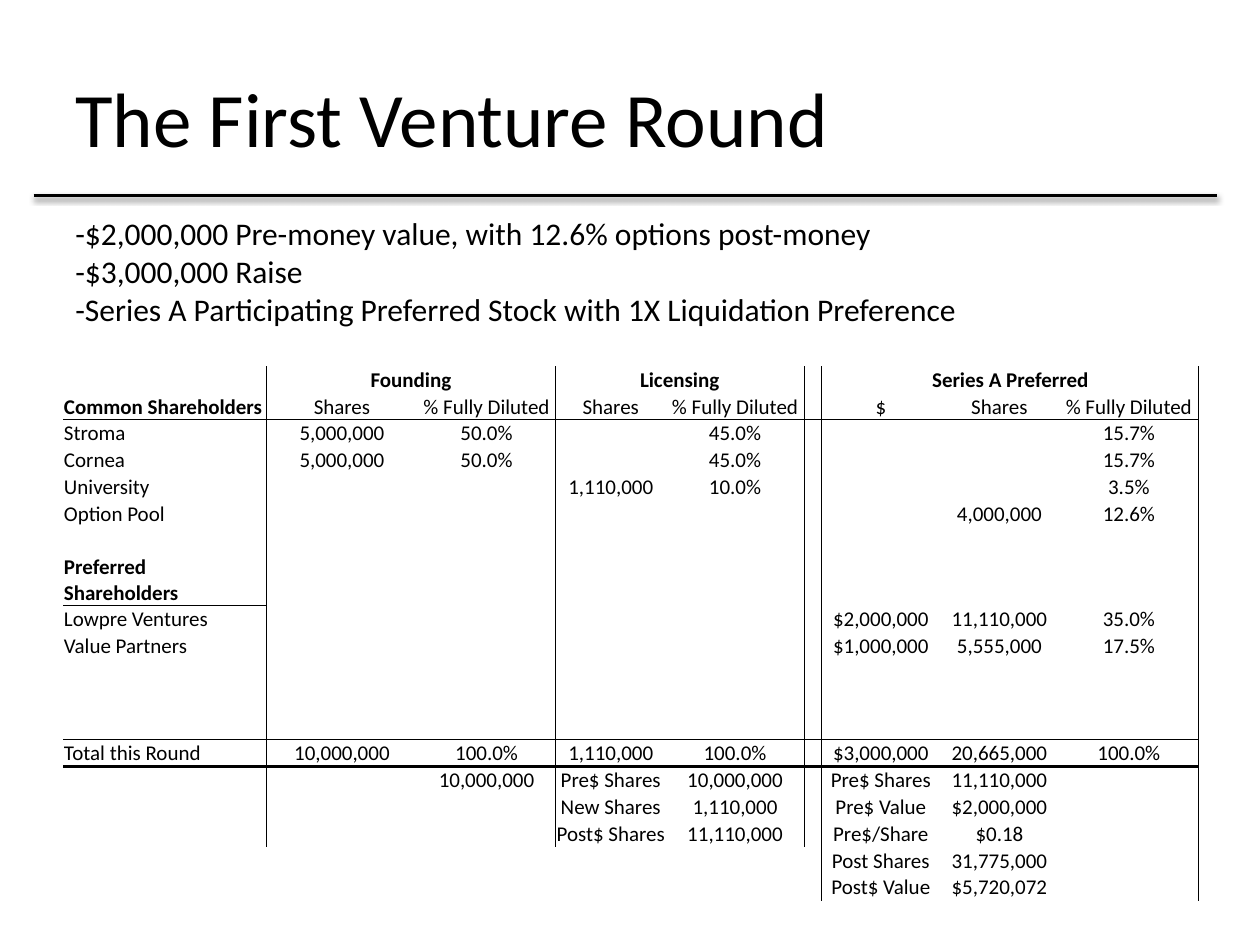
from lxml import etree
from pptx import Presentation
from pptx.dml.color import RGBColor
from pptx.enum.shapes import MSO_CONNECTOR as Connector
from pptx.enum.text import MSO_ANCHOR as Anchor, PP_ALIGN as Align
from pptx.oxml import parse_xml
from pptx.oxml.ns import nsdecls, qn
from pptx.util import Cm, Pt

FONT = "Calibri"
BLACK = "000000"
THIN, THICK = 0.5, 2

TERMS = [
    "-$2,000,000 Pre-money value, with 12.6% options post-money",
    "-$3,000,000 Raise",
    "-Series A Participating Preferred Stock with 1X Liquidation Preference",
]

# One string per table row, cells divided by bars
CAP_TABLE = [
    "|Founding||Licensing|||Series A Preferred||",
    "Common Shareholders|Shares|% Fully Diluted|Shares|% Fully Diluted||$|Shares|% Fully Diluted",
    "Stroma|5,000,000|50.0%||45.0%||||15.7%",
    "Cornea|5,000,000|50.0%||45.0%||||15.7%",
    "University|||1,110,000|10.0%||||3.5%",
    "Option Pool|||||||4,000,000|12.6%",
    "||||||||",
    "Preferred Shareholders||||||||",
    "Lowpre Ventures||||||$2,000,000|11,110,000|35.0%",
    "Value Partners||||||$1,000,000|5,555,000|17.5%",
    "||||||||",
    "||||||||",
    "||||||||",
    "Total this Round|10,000,000|100.0%|1,110,000|100.0%||$3,000,000|20,665,000|100.0%",
    "||10,000,000|Pre$ Shares|10,000,000||Pre$ Shares|11,110,000|",
    "|||New Shares|1,110,000||Pre$ Value|$2,000,000|",
    "|||Post$ Shares|11,110,000||Pre$/Share|$0.18|",
    "||||||Post Shares|31,775,000|",
    "||||||Post$ Value|$5,720,072|",
]
COLUMN_WIDTHS = [4.1, 3.05, 2.78, 2.23, 2.78, 0.36, 2.38, 2.4, 2.82]
ROW_HEIGHT = 0.54
GROUPS = [(1, 2), (3, 4), (6, 8)]  # first and last column of each round
BOLD_CELLS = {(0, 1), (0, 3), (0, 6), (1, 0), (7, 0)}

# Rules by grid edge: edge n lies before row or column n
SHORT_EDGES, LONG_EDGES = {1, 3, 5}, {6, 9}
LAST_SHORT_ROW = 16
ROW_EDGES = {2: THIN, 13: THIN, 14: THICK}


def color(value):
    return RGBColor.from_string(value)


def write(frame, lines, size=18, bold=False, align=Align.LEFT):
    for index, line in enumerate(lines):
        para = frame.paragraphs[0] if index == 0 else frame.add_paragraph()
        para.alignment = align
        if not line:
            # An empty cell keeps the line height of its font size
            end = etree.SubElement(para._p, qn("a:endParaRPr"))
            end.set("sz", str(size * 100))
            continue
        span = para.add_run()
        span.text = line
        span.font.name = FONT
        span.font.size = Pt(size)
        span.font.bold = bold
        span.font.color.rgb = color(BLACK)


def add_text(page, box, lines, anchor=Anchor.TOP, wrap=True, **text_format):
    frame = page.shapes.add_textbox(*map(Cm, box)).text_frame
    frame.word_wrap = wrap
    frame.vertical_anchor = anchor
    write(frame, lines, **text_format)


def add_heading(page, box):
    """Title with a shadowed rule below it, running past both sides."""
    left, top, width, height = box
    add_text(page, box, ["The First Venture Round"], anchor=Anchor.MIDDLE, size=44)
    bottom = Cm(top + height)
    rule = page.shapes.add_connector(
        Connector.STRAIGHT, Cm(left - 0.59), bottom, Cm(left + width + 0.41), bottom)
    rule.line.color.rgb = color(BLACK)
    rule.line.width = Pt(2)
    rule._element.spPr.append(parse_xml(
        f'<a:effectLst {nsdecls("a")}>'
        f'<a:outerShdw blurRad="{Pt(3.1)}" dist="{Pt(1.6)}" dir="5400000" rotWithShape="0">'
        f'<a:srgbClr val="{BLACK}"><a:alpha val="38000"/></a:srgbClr>'
        '</a:outerShdw></a:effectLst>'))


def column_rule(row, edge):
    short = edge in SHORT_EDGES and row <= LAST_SHORT_ROW
    return THIN if short or edge in LONG_EDGES else 0


def row_rule(edge, column):
    if (edge, column) == (8, 0):  # under "Preferred Shareholders"
        return THIN
    return ROW_EDGES.get(edge, 0)


def set_borders(cell, row, column):
    sides = {
        "lnL": column_rule(row, column),
        "lnR": column_rule(row, column + cell.span_width),
        "lnT": row_rule(row, column),
        "lnB": row_rule(row + 1, column),
    }
    properties = cell._tc.get_or_add_tcPr()
    for name, width in sides.items():
        fill = (f'<a:solidFill><a:srgbClr val="{BLACK}"/></a:solidFill>'
                if width else "<a:noFill/>")
        properties.append(parse_xml(
            f'<a:{name} {nsdecls("a")} w="{Pt(width)}">{fill}</a:{name}>'))


def add_cap_table(page, left, top):
    rows = [line.split("|") for line in CAP_TABLE]
    table = page.shapes.add_table(
        len(rows), len(COLUMN_WIDTHS), Cm(left), Cm(top),
        Cm(sum(COLUMN_WIDTHS)), Cm(ROW_HEIGHT * len(rows))).table
    table.first_row = table.horz_banding = False
    for column, width in zip(table.columns, COLUMN_WIDTHS):
        column.width = Cm(width)
    for row in table.rows:
        row.height = Cm(ROW_HEIGHT)
    for first, last in GROUPS:
        table.cell(0, first).merge(table.cell(0, last))

    for r, texts in enumerate(rows):
        for c, text in enumerate(texts):
            cell = table.cell(r, c)
            cell.margin_left = cell.margin_right = cell.margin_top = Cm(0.02)
            cell.margin_bottom = 0
            cell.vertical_anchor = Anchor.BOTTOM
            set_borders(cell, r, c)
            cell.fill.background()
            write(cell.text_frame, [text], size=12, bold=(r, c) in BOLD_CELLS,
                  align=Align.CENTER if c else Align.LEFT)


def main():
    deck = Presentation()
    deck.slide_width, deck.slide_height = Cm(25.4), Cm(19.05)
    page = deck.slides.add_slide(deck.slide_layouts[6])
    add_cap_table(page, 1.27, 7.38)
    add_heading(page, (1.27, 0.76, 22.86, 3.18))
    add_text(page, (1.27, 4.19, 18.57, 2.57), TERMS, wrap=False)
    deck.save("out.pptx")


if __name__ == "__main__":
    main()
